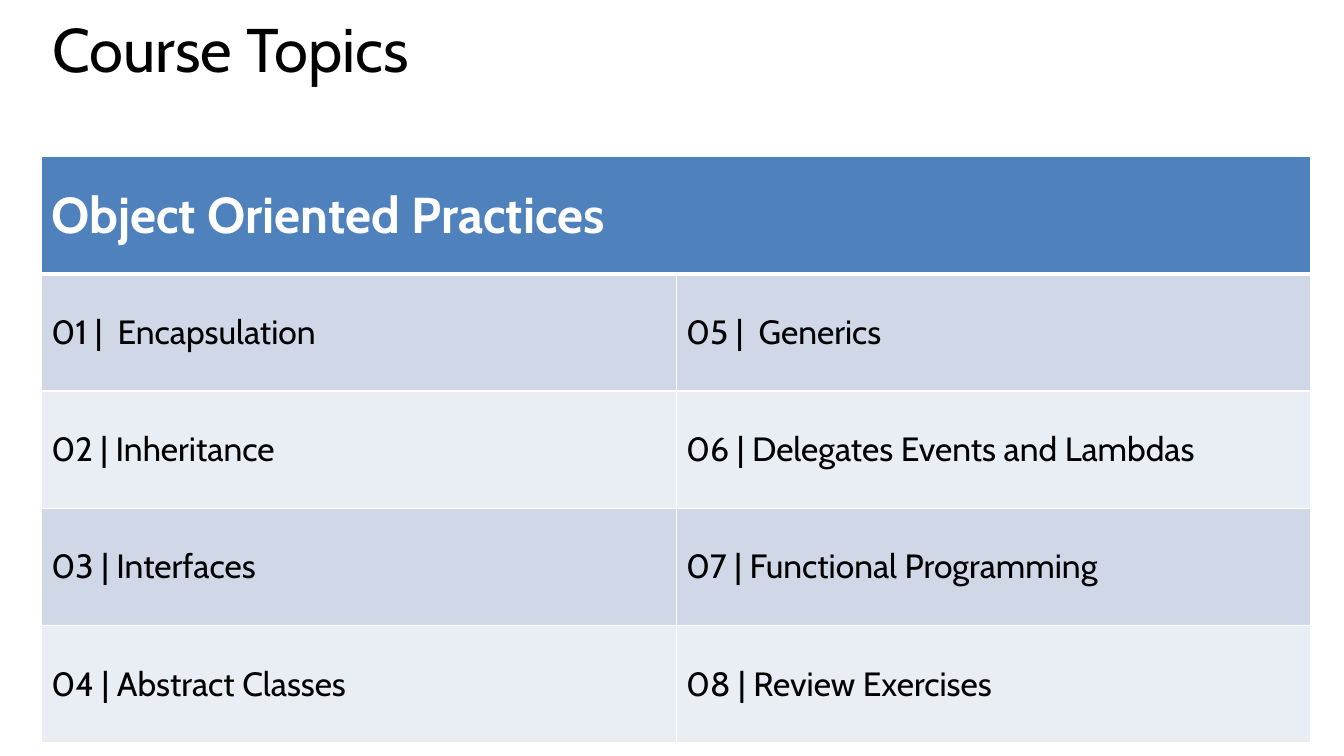
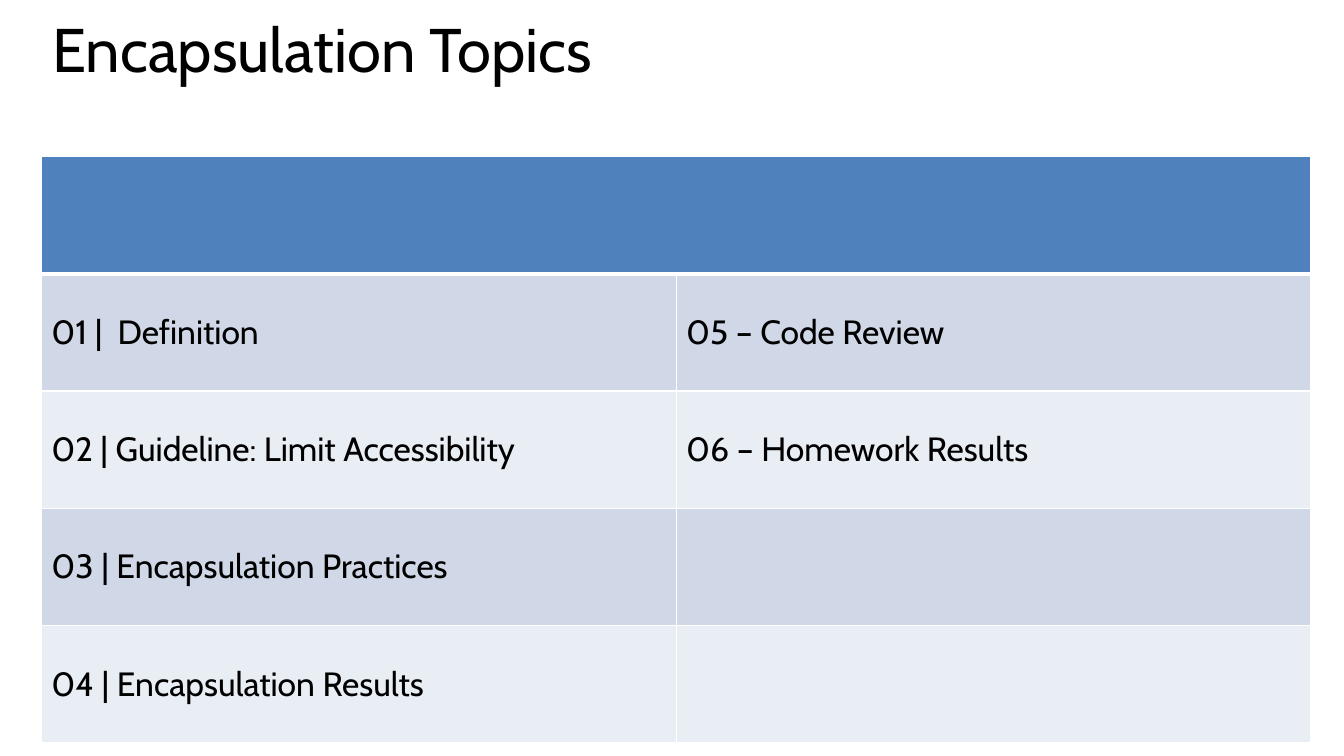
from lxml.etree import SubElement
from pptx import Presentation
from pptx.dml.color import RGBColor
from pptx.enum.text import MSO_ANCHOR
from pptx.oxml.ns import qn
from pptx.util import Cm, Pt

BLACK = RGBColor(0x00, 0x00, 0x00)
WHITE = RGBColor(0xFF, 0xFF, 0xFF)
BLUE = RGBColor(0x4F, 0x81, 0xBD)
BANDS = (RGBColor(0xD0, 0xD8, 0xE8), RGBColor(0xE9, 0xED, 0xF4))
FONT = "Cabin"

TITLE_BOX = Cm(1.07), Cm(0.51), Cm(32), Cm(2.95)
TABLE_BOX = Cm(1.04), Cm(3.94), Cm(32), Cm(14.78)

TOPICS = (
    ("Course Topics", "Object Oriented Practices", (
        ("01 |  Encapsulation", "05 |  Generics"),
        ("02 | Inheritance", "06 | Delegates Events and Lambdas"),
        ("03 | Interfaces", "07 | Functional Programming"),
        ("04 | Abstract Classes", "08 | Review Exercises"),
    )),
    ("Encapsulation Topics", "", (
        ("01 |  Definition", "05 – Code Review"),
        ("02 | Guideline: Limit Accessibility", "06 – Homework Results"),
        ("03 | Encapsulation Practices", ""),
        ("04 | Encapsulation Results", ""),
    )),
)


def put_text(frame, text, size=24, color=BLACK, bold=False, spacing=None):
    para = frame.paragraphs[0]
    para.line_spacing = spacing
    if not text:
        return
    run = para.add_run()
    run.text = text
    font = run.font
    font.name, font.size, font.bold = FONT, Pt(size), bold
    font.color.rgb = color


def add_edges(cell, top=1, bottom=1):
    """Draw white cell borders; widths are in points."""
    props = cell._tc.get_or_add_tcPr()
    for side, width in (("L", 1), ("R", 1), ("T", top), ("B", bottom)):
        line = SubElement(props, qn(f"a:ln{side}"), w=str(Pt(width)))
        fill = SubElement(line, qn("a:solidFill"))
        SubElement(fill, qn("a:srgbClr"), val=str(WHITE))


def style_cell(cell, fill, **edges):
    add_edges(cell, **edges)
    cell.fill.solid()
    cell.fill.fore_color.rgb = fill
    cell.vertical_anchor = MSO_ANCHOR.MIDDLE


def add_title(slide, box, text):
    frame = slide.shapes.add_textbox(*box).text_frame
    frame.word_wrap = True
    frame.vertical_anchor = MSO_ANCHOR.TOP
    put_text(frame, text, size=44, spacing=0.8)


def add_topics(slide, box, head, rows):
    """Add a table with one merged head row above banded topic rows."""
    table = slide.shapes.add_table(len(rows) + 1, 2, *box).table
    for cell in table.rows[0].cells:
        style_cell(cell, BLUE, bottom=3)
    first = table.cell(0, 0)
    first.merge(table.cell(0, 1))
    put_text(first.text_frame, head, size=36, color=WHITE, bold=True)
    for r, row in enumerate(rows, 1):
        for c, text in enumerate(row):
            cell = table.cell(r, c)
            style_cell(cell, BANDS[(r - 1) % 2], top=3 if r == 1 else 1)
            put_text(cell.text_frame, text)


def main():
    deck = Presentation()
    deck.slide_width, deck.slide_height = Cm(33.87), Cm(19.05)
    for title, head, rows in TOPICS:
        slide = deck.slides.add_slide(deck.slide_layouts[6])
        add_title(slide, TITLE_BOX, title)
        add_topics(slide, TABLE_BOX, head, rows)
    deck.save("out.pptx")


if __name__ == "__main__":
    main()
